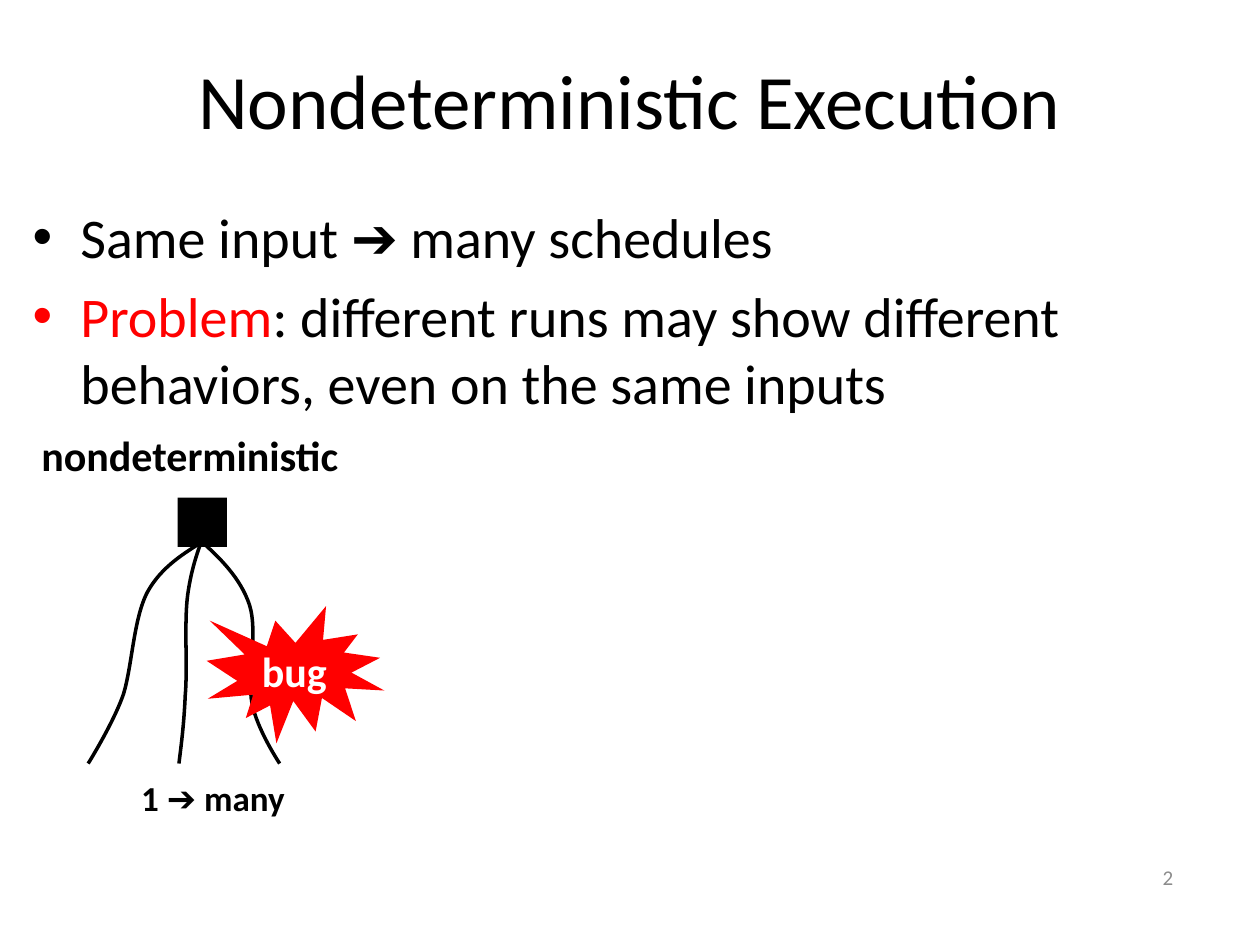
import pptx
import pptx.dml.color
import pptx.enum.shapes
import pptx.enum.text
import pptx.util
from lxml import etree
from pptx.oxml.ns import qn

Inches = pptx.util.Inches
Pt = pptx.util.Pt
RGBColor = pptx.dml.color.RGBColor
ALIGN = pptx.enum.text.PP_ALIGN
ANCHOR = pptx.enum.text.MSO_ANCHOR
PRESET = pptx.enum.shapes.MSO_SHAPE

BLACK = RGBColor(0, 0, 0)
WHITE = RGBColor(255, 255, 255)
RED = RGBColor(255, 0, 0)
GRAY = RGBColor(0x8C, 0x8C, 0x8C)

# Each path: a start point, then two control points and an end point per curve.
LEFT_SCHEDULE = [(1.64, 4.28), (1.46, 4.39), (1.28, 4.5), (1.17, 4.7),
                 (1.06, 4.91), (1.05, 5.28), (0.98, 5.51),
                 (0.9, 5.74), (0.7, 6.06), (0.7, 6.06)]
RIGHT_SCHEDULE = [(1.58, 4.28), (1.75, 4.43), (1.91, 4.59), (1.98, 4.8),
                  (2.05, 5.02), (1.96, 5.37), (2, 5.58),
                  (2.04, 5.79), (2.22, 6.06), (2.22, 6.06)]
MIDDLE_SCHEDULE = [(1.64, 4.19), (1.58, 4.34), (1.52, 4.5), (1.49, 4.72),
                   (1.46, 4.94), (1.49, 5.3), (1.47, 5.52),
                   (1.46, 5.75), (1.44, 5.9), (1.42, 6.06)]


def format_run(run, size, color, bold=False):
    run.font.name = "Calibri"
    run.font.size = Pt(size)
    run.font.bold = bold
    run.font.color.rgb = color


def set_text(shape, text, size, color, align, anchor, bold=False):
    frame = shape.text_frame
    frame.text = text
    frame.vertical_anchor = anchor
    paragraph = frame.paragraphs[0]
    paragraph.alignment = align
    format_run(paragraph.runs[0], size, color, bold)


def add_title(slide, text):
    title = slide.shapes.title
    title.left, title.top = Inches(0.5), Inches(0.16)
    title.width, title.height = Inches(9), Inches(1.25)
    set_text(title, text, 44, BLACK, ALIGN.CENTER, ANCHOR.MIDDLE)


def add_label(slide, box, text, size, color, align, anchor, bold=False, wrap=True):
    label = slide.shapes.add_textbox(*map(Inches, box))
    label.text_frame.word_wrap = wrap
    set_text(label, text, size, color, align, anchor, bold)


def add_bullets(slide, box, items):
    """Add a bullet list; each item is a list of (text, color) parts."""
    frame = slide.shapes.add_textbox(*map(Inches, box)).text_frame
    frame.word_wrap = True
    for index, parts in enumerate(items):
        paragraph = frame.add_paragraph() if index else frame.paragraphs[0]
        paragraph.space_before = Pt(6.4)
        properties = paragraph._p.get_or_add_pPr()
        properties.set("marL", str(Inches(0.38)))
        properties.set("indent", str(-Inches(0.38)))
        etree.SubElement(properties, qn("a:buFont")).set("typeface", "Arial")
        etree.SubElement(properties, qn("a:buChar")).set("char", "•")
        for text, color in parts:
            run = paragraph.add_run()
            run.text = text
            format_run(run, 32, color)


def add_solid(slide, preset, box, color):
    solid = slide.shapes.add_shape(preset, *map(Inches, box))
    solid.shadow.inherit = False
    solid.fill.solid()
    solid.fill.fore_color.rgb = color
    solid.line.fill.background()
    return solid


def set_outline(shape, color, width):
    shape.shadow.inherit = False
    shape.fill.background()
    shape.line.color.rgb = color
    shape.line.width = Pt(width)


def bend_segments(freeform):
    """Turn each three line segments into one cubic curve."""
    segments = list(freeform._element.iter(qn("a:lnTo")))
    for first in range(0, len(segments), 3):
        curve = etree.Element(qn("a:cubicBezTo"))
        segments[first].addprevious(curve)
        for segment in segments[first:first + 3]:
            curve.append(segment[0])
            segment.getparent().remove(segment)


def add_schedule(slide, points):
    start, *rest = [tuple(map(Inches, point)) for point in points]
    builder = slide.shapes.build_freeform(*start)
    builder.add_line_segments(rest, close=False)
    schedule = builder.convert_to_shape()
    bend_segments(schedule)
    set_outline(schedule, BLACK, 2)


def main():
    deck = pptx.Presentation()
    deck.slide_width, deck.slide_height = Inches(10), Inches(7.5)
    slide = deck.slides.add_slide(deck.slide_layouts[5])

    add_title(slide, "Nondeterministic Execution")
    add_bullets(slide, (0.16, 1.56, 9.69, 2.03), [
        [("Same input ➔ many schedules", BLACK)],
        [("Problem", RED),
         (": different runs may show different behaviors, even on the same inputs", BLACK)],
    ])
    add_label(slide, (7.08, 6.76, 2.33, 0.4), "2", 12, GRAY, ALIGN.RIGHT, ANCHOR.MIDDLE)
    add_label(slide, (0.23, 3.36, 2.58, 0.5), "nondeterministic", 24, BLACK,
              ALIGN.LEFT, ANCHOR.TOP, bold=True, wrap=False)

    add_solid(slide, PRESET.RECTANGLE, (1.41, 3.95, 0.39, 0.39), BLACK)
    add_schedule(slide, LEFT_SCHEDULE)
    add_schedule(slide, RIGHT_SCHEDULE)
    bug = add_solid(slide, PRESET.EXPLOSION1, (1.64, 4.81, 1.41, 1.09), RED)
    set_text(bug, "bug", 24, WHITE, ALIGN.CENTER, ANCHOR.MIDDLE, bold=True)
    add_schedule(slide, MIDDLE_SCHEDULE)

    ratio = slide.shapes.add_shape(PRESET.RECTANGLE, *map(Inches, (0.83, 6.11, 1.72, 0.44)))
    set_outline(ratio, WHITE, 0.75)
    set_text(ratio, "1 ➔ many", 20, BLACK, ALIGN.CENTER, ANCHOR.TOP, bold=True)

    deck.save("out.pptx")


if __name__ == "__main__":
    main()
